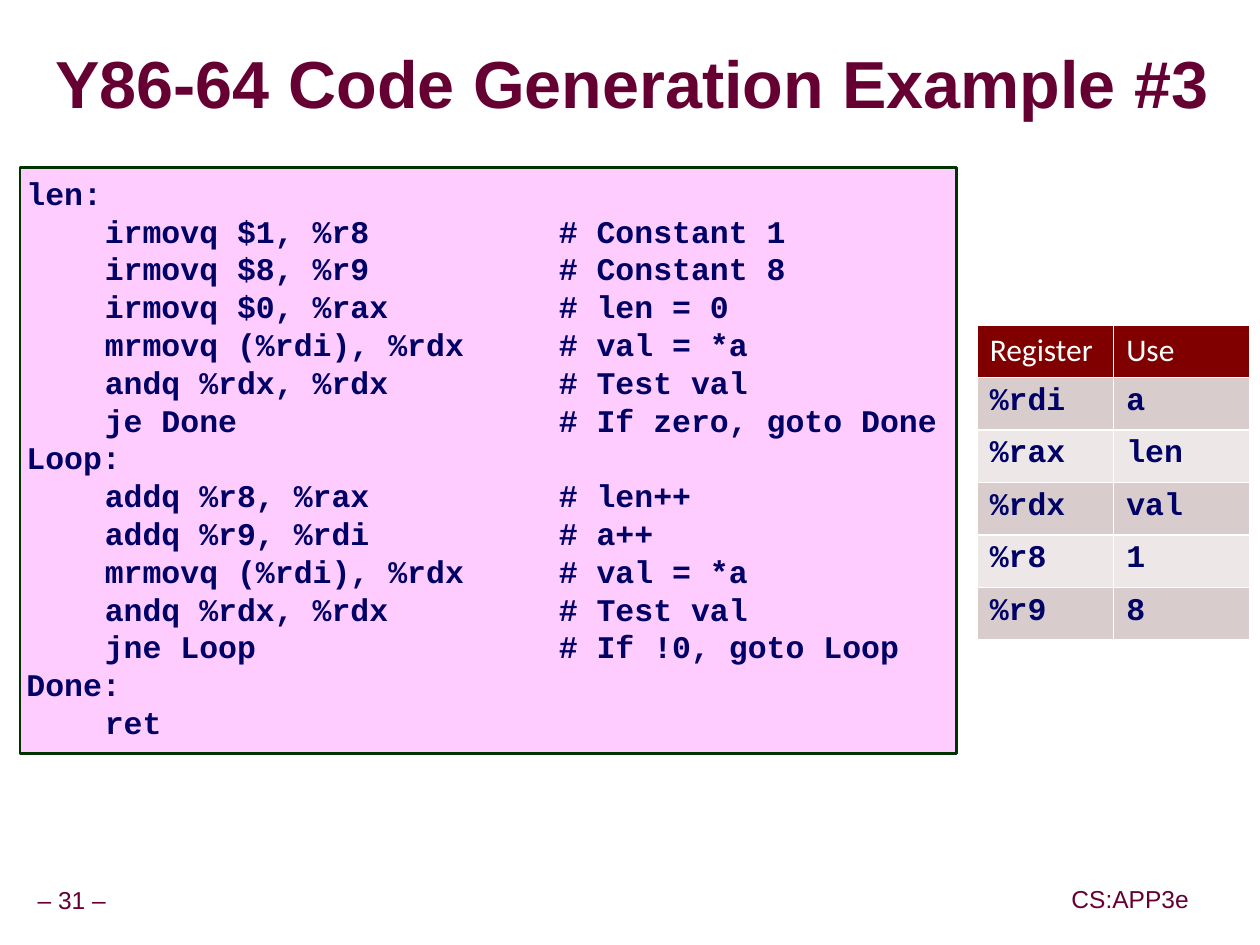
"""Build the Y86-64 code generation slide with its listing and register table."""
from lxml import etree
from pptx import Presentation
from pptx.dml.color import RGBColor
from pptx.enum.shapes import MSO_SHAPE
from pptx.enum.text import MSO_ANCHOR, MSO_AUTO_SIZE, PP_ALIGN
from pptx.oxml import parse_xml
from pptx.oxml.ns import qn
from pptx.util import Pt

RECT = MSO_SHAPE.RECTANGLE
TOP, MIDDLE = MSO_ANCHOR.TOP, MSO_ANCHOR.MIDDLE
LEFT, CENTER = PP_ALIGN.LEFT, PP_ALIGN.CENTER
NOFIT = MSO_AUTO_SIZE.NONE
NS = 'xmlns:a="http://schemas.openxmlformats.org/drawingml/2006/main"'
WINE, NAVY, WHITE = "660033", "000066", "FFFFFF"


def rgb(code):
    return RGBColor.from_string(code)


def style(frame, face, size, color, bold=False, align=LEFT, space=1.0):
    for para in frame.paragraphs:
        para.alignment = align
        para.line_spacing = space
        for run in para.runs:
            font = run.font
            font.name, font.size, font.bold = face, Pt(size), bold
            font.color.rgb = rgb(color)


deck = Presentation()
deck.slide_width, deck.slide_height = Pt(720), Pt(540)
slide = deck.slides.add_slide(deck.slide_layouts[5])
shapes = slide.shapes

for text, x, y, w, h in [
    ("– 31 –", 17.3, 504, 47.5, 22.3),
    ("CS:APP3e", 608.4, 503.3, 74.9, 23),
]:
    foot = shapes.add_textbox(Pt(x), Pt(y), Pt(w), Pt(h)).text_frame
    foot.margin_left = foot.margin_right = Pt(3.6)
    foot.margin_top = foot.margin_bottom = Pt(3.6)
    foot.vertical_anchor = MIDDLE
    foot.word_wrap = False
    foot.text = text
    style(foot, "Arial", 14, WINE, align=CENTER, space=0.9)

title = shapes.title
title.left, title.top = Pt(31.7), Pt(19.4)
title.width, title.height = Pt(686), Pt(61.2)
head = title.text_frame
head.margin_left = head.margin_right = head.margin_top = head.margin_bottom = 0
head.vertical_anchor = MIDDLE
head.auto_size = NOFIT
head.text = "Y86-64 Code Generation Example #3"
style(head, "Arial", 38, WINE, True, space=0.87)
props = head.paragraphs[0].runs[0].font._element
props.find(qn("a:solidFill")).addnext(parse_xml(
    f'<a:effectLst {NS}><a:outerShdw dist="38100" dir="2700000">'
    '<a:srgbClr val="969696"/></a:outerShdw></a:effectLst>'))

lines = [
    "len:",
    "\tirmovq $1, %r8\t# Constant 1",
    "\tirmovq $8, %r9\t# Constant 8",
    "\tirmovq $0, %rax\t# len = 0",
    "\tmrmovq (%rdi), %rdx\t# val = *a",
    "\tandq %rdx, %rdx\t# Test val",
    "\tje Done\t# If zero, goto Done",
    "Loop:",
    "\taddq %r8, %rax\t# len++",
    "\taddq %r9, %rdi\t# a++",
    "\tmrmovq (%rdi), %rdx\t# val = *a",
    "\tandq %rdx, %rdx\t# Test val",
    "\tjne Loop\t# If !0, goto Loop",
    "Done:",
    "\tret",
]
box = shapes.add_shape(RECT, Pt(11.5), Pt(95.8), Pt(535), Pt(334.8))
box.shadow.inherit = False
box.fill.solid()
box.fill.fore_color.rgb = rgb("FFCCFF")
box.line.color.rgb = rgb("003300")
box.line.width = Pt(1.5)
code = box.text_frame
code.margin_left = code.margin_right = Pt(3.6)
code.margin_top = code.margin_bottom = Pt(3.6)
code.vertical_anchor = TOP
code.word_wrap = True
code.text = "\n".join(lines)
style(code, "Courier New", 18, NAVY, True)
for para in code.paragraphs:
    tabs = etree.SubElement(para._p.get_or_add_pPr(), qn("a:tabLst"))
    for stop in (44.8, 304.2):
        etree.SubElement(tabs, qn("a:tab"), pos=str(Pt(stop)), algn="l")

rows = [("Register", "Use"), ("%rdi", "a"), ("%rax", "len"),
        ("%rdx", "val"), ("%r8", "1"), ("%r9", "8")]
table = shapes.add_table(
    len(rows), 2, Pt(558.4), Pt(185.8), Pt(156), Pt(180)).table
for col in table.columns:
    col.width = Pt(78)
for i, row in enumerate(rows):
    table.rows[i].height = Pt(30)
    for j, text in enumerate(row):
        cell = table.cell(i, j)
        cell.text = text
        if i == 0:
            style(cell.text_frame, "Calibri", 18, WHITE)
            shade = "800000"
        else:
            style(cell.text_frame, "Courier New", 18, NAVY, True)
            shade = "D8CCCC" if i % 2 else "EDE7E7"
        edges = cell._tc.get_or_add_tcPr()
        for side in "LRTB":
            edges.append(parse_xml(
                f'<a:ln{side} {NS} w="{Pt(1)}"><a:solidFill>'
                f'<a:srgbClr val="{WHITE}"/></a:solidFill></a:ln{side}>'))
        cell.fill.solid()
        cell.fill.fore_color.rgb = rgb(shade)

deck.save("out.pptx")
